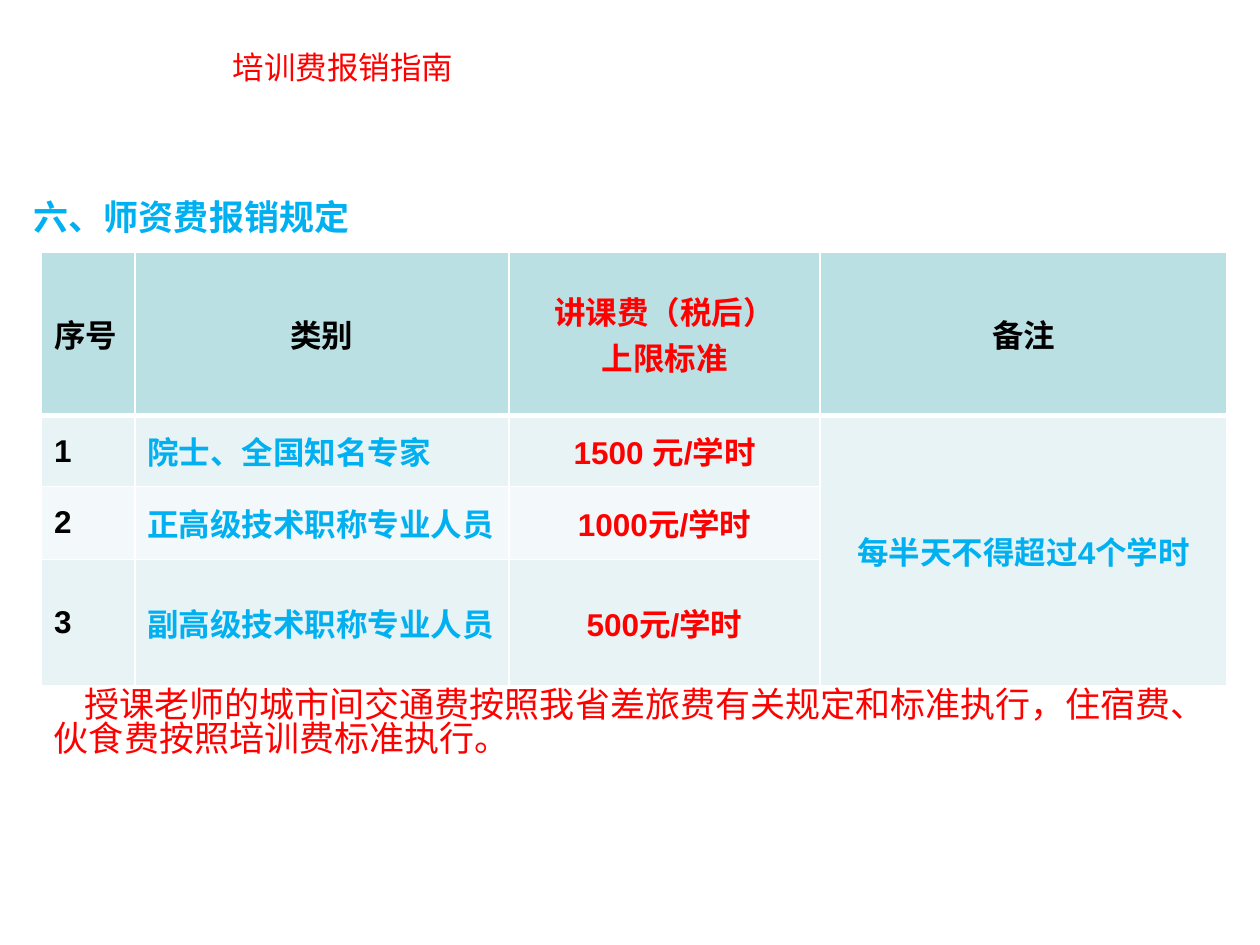
from pptx import Presentation
from pptx.dml.color import RGBColor
from pptx.enum.text import MSO_ANCHOR, PP_ALIGN
from pptx.oxml import parse_xml
from pptx.oxml.ns import nsdecls
from pptx.util import Inches, Pt

BLACK, RED, BLUE = "000000", "FF0000", "00B0F0"
HEADER_FILL, ODD_FILL, EVEN_FILL = "BBE0E3", "E7F3F4", "F3F9FA"
LEFT, CENTER = PP_ALIGN.LEFT, PP_ALIGN.CENTER


def add_text(paragraph, text, size, color, font, bold=False):
    run = paragraph.add_run()
    run.text = text
    run.font.size = Pt(size)
    run.font.name = font
    run.font.bold = bold
    run.font.color.rgb = RGBColor.from_string(color)


def add_border(cell, side, width):
    cell._tc.get_or_add_tcPr().append(parse_xml(
        f'<a:{side} {nsdecls("a")} w="{Pt(width)}"><a:solidFill>'
        f'<a:srgbClr val="FFFFFF"/></a:solidFill></a:{side}>'))


prs = Presentation()
prs.slide_width, prs.slide_height = Inches(10), Inches(7.5)
slide = prs.slides.add_slide(prs.slide_layouts[6])

passages = [
    ("六、师资费报销规定", (0.17, 1.5, 9.83, 0.5), 20, BLUE, "Arial", True, 0, 1.0),
    ("培训费报销指南", (1.75, 0.33, 5.5, 0.55), 18, RED, "Noto Sans CJK SC", False, 0, 1.0),
    ("授课老师的城市间交通费按照我省差旅费有关规定和标准执行，住宿费、伙食费按照培训费标准执行。",
     (0.33, 5.42, 9.42, 0.91), 20, RED, "Noto Sans CJK SC", False, 0.24, 0.83),
]
for text, place, size, color, font, bold, indent, spacing in passages:
    passage = slide.shapes.add_textbox(*[Inches(length) for length in place])
    passage.text_frame.word_wrap = True
    paragraph = passage.text_frame.paragraphs[0]
    paragraph.line_spacing = spacing
    if indent:
        paragraph._p.get_or_add_pPr().set("indent", str(Inches(indent)))
    add_text(paragraph, text, size, color, font, bold)

fee_rows = [
    ["序号", "类别", "讲课费（税后）\n上限标准", "备注"],
    ["1", "院士、全国知名专家", "1500 元/学时", "每半天不得超过4个学时"],
    ["2", "正高级技术职称专业人员", "1000元/学时", ""],
    ["3", "副高级技术职称专业人员", "500元/学时", ""],
]
column_widths = [0.74, 2.97, 2.47, 3.23]
row_heights = [1.3, 0.56, 0.58, 1.0]
row_fills = [HEADER_FILL, ODD_FILL, EVEN_FILL, ODD_FILL]
header_colors = [BLACK, BLACK, RED, BLACK]
body_colors = [BLACK, BLUE, RED, BLUE]
header_aligns = [LEFT, CENTER, CENTER, CENTER]
body_aligns = [LEFT, LEFT, CENTER, CENTER]

fees = slide.shapes.add_table(
    4, 4, Inches(0.33), Inches(2), Inches(9.42), Inches(3.44)).table
for column, width in zip(fees.columns, column_widths):
    column.width = Inches(width)
for row, height in zip(fees.rows, row_heights):
    row.height = Inches(height)
fees.cell(1, 3).merge(fees.cell(3, 3))

for r, texts in enumerate(fee_rows):
    colors = body_colors if r else header_colors
    aligns = body_aligns if r else header_aligns
    for c, text in enumerate(texts):
        cell = fees.cell(r, c)
        cell.vertical_anchor = MSO_ANCHOR.MIDDLE
        for side in ("lnL", "lnR", "lnT", "lnB"):
            thick = (r, side) in [(0, "lnB"), (1, "lnT")]
            add_border(cell, side, 3 if thick else 1)
        cell.fill.solid()
        cell.fill.fore_color.rgb = RGBColor.from_string(row_fills[r])
        if cell.is_spanned:
            continue
        for i, line in enumerate(text.split("\n")):
            frame = cell.text_frame
            paragraph = frame.add_paragraph() if i else frame.paragraphs[0]
            paragraph.alignment = aligns[c]
            add_text(paragraph, line, 18, colors[c], "Arial", True)

prs.save("out.pptx")
